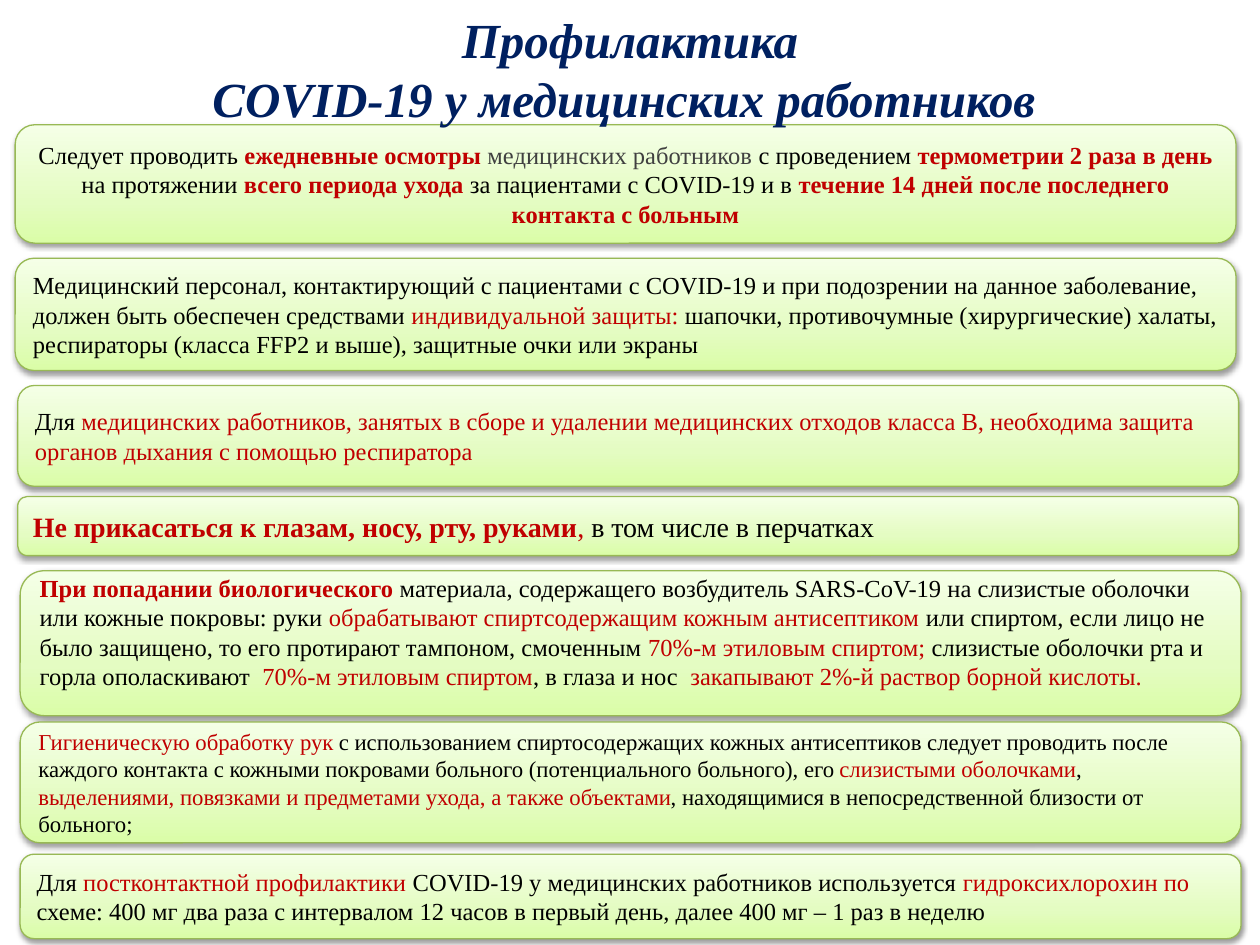
from pptx import Presentation
from pptx.dml.color import RGBColor
from pptx.enum.shapes import MSO_SHAPE as Shape
from pptx.enum.text import MSO_ANCHOR as Anchor, MSO_AUTO_SIZE as AutoSize, PP_ALIGN as Align
from pptx.oxml import parse_xml
from pptx.oxml.ns import nsdecls
from pptx.util import Inches, Pt

FONT = "Times New Roman"
COLORS = {
    "title": "002060", "plain": "000000", "red": "C00000", "grey": "404040",
    "edge": "98B955", "low": "DAFDA7", "middle": "E4FCC2", "high": "F5FFE7",
}
STOPS = [(0, "low"), (35, "middle"), (100, "high")]
TITLE = "Профилактика\vCOVID-19 у медицинских работников "
BOX_WIDTH = 9.69
LEFTS = [0.12, 0.12, 0.14, 0.14, 0.16, 0.16, 0.16]
TOPS = [0.99, 2.05, 3.06, 3.94, 4.53, 5.73, 6.78]
HEIGHTS = [0.94, 0.89, 0.8, 0.47, 1.15, 0.96, 0.67]
SIZES = [14, 14, 14, 16, 14, 13, 14]
ALIGNS = [Align.CENTER] + [Align.LEFT] * 6
BOTTOM_INSETS = [0.05] * 4 + [0.23] + [0.05] * 2

RULES = [
    [("Следует проводить ", "plain"),
     ("ежедневные осмотры ", "red bold"),
     ("медицинских работников ", "grey"),
     ("с проведением ", "plain"),
     ("термометрии 2 раза в день ", "red bold"),
     ("на протяжении ", "plain"),
     ("всего периода ухода ", "red bold"),
     ("за пациентами с COVID-19 и в ", "plain"),
     ("течение 14 дней после последнего контакта с больным", "red bold")],
    [("Медицинский персонал, контактирующий с пациентами с COVID-19 и при подозрении "
      "на данное заболевание, должен быть обеспечен средствами ", "plain"),
     ("индивидуальной защиты: ", "red"),
     ("шапочки, противочумные (хирургические) халаты, респираторы (класса FFP2 и выше), "
      "защитные очки или экраны", "plain")],
    [("Для ", "plain"),
     ("медицинских работников, занятых в сборе и удалении медицинских отходов класса В, "
      "необходима защита органов дыхания с помощью респиратора", "red")],
    [("Не прикасаться к глазам, носу, рту, руками", "red bold"),
     (", ", "red"),
     ("в том числе в перчатках", "plain")],
    [("При попадании биологического ", "red bold"),
     ("материала, содержащего возбудитель SARS-CoV-19 на слизистые оболочки "
      "или кожные покровы: руки ", "plain"),
     ("обрабатывают спиртсодержащим кожным антисептиком ", "red"),
     ("или спиртом, если лицо не было защищено, то его протирают тампоном, смоченным ", "plain"),
     ("70%-м этиловым спиртом; ", "red"),
     ("слизистые оболочки рта и горла ополаскивают  ", "plain"),
     ("70%-м этиловым спиртом", "red"),
     (", в глаза и нос  ", "plain"),
     ("закапывают 2%-й раствор борной кислоты.", "red")],
    [("Гигиеническую обработку рук ", "red"),
     ("с использованием спиртосодержащих кожных антисептиков следует проводить после каждого "
      "контакта с кожными покровами больного (потенциального больного), его ", "plain"),
     ("слизистыми оболочками", "red"),
     (", ", "plain"),
     ("выделениями, повязками и предметами ухода, а также объектами", "red"),
     (", находящимися в непосредственной близости от больного;", "plain")],
    [("Для ", "plain"),
     ("постконтактной профилактики ", "red"),
     ("COVID-19 у медицинских работников используется ", "plain"),
     ("гидроксихлорохин по ", "red"),
     ("схеме: 400 мг два раза с интервалом 12 часов в первый день, "
      "далее 400 мг – 1 раз в неделю", "plain")],
]


def color(name):
    return RGBColor.from_string(COLORS[name])


def add_span(para, text, size, tone, bold=False, italic=False):
    span = para.add_run()
    span.text = text
    font = span.font
    font.name, font.size, font.bold, font.italic = FONT, Pt(size), bold, italic
    font.color.rgb = color(tone)


def add_gradient_and_shadow(box):
    stops = "".join(
        f'<a:gs pos="{position * 1000}"><a:srgbClr val="{COLORS[name]}"/></a:gs>'
        for position, name in STOPS)
    gradient = parse_xml(
        f'<a:gradFill {nsdecls("a")} rotWithShape="1"><a:gsLst>{stops}</a:gsLst>'
        '<a:lin ang="16200000" scaled="0"/></a:gradFill>')
    shadow = parse_xml(
        f'<a:effectLst {nsdecls("a")}><a:outerShdw blurRad="{Pt(3.1)}" dist="{Pt(1.6)}" '
        'dir="5400000" rotWithShape="0"><a:srgbClr val="000000"><a:alpha val="38000"/>'
        '</a:srgbClr></a:outerShdw></a:effectLst>')
    line = box.line._get_or_add_ln()
    line.addprevious(gradient)
    line.addnext(shadow)


def add_rule(page, spans, left, top, height, size, align, bottom_inset):
    box = page.shapes.add_shape(Shape.ROUNDED_RECTANGLE, *map(Inches, (left, top, BOX_WIDTH, height)))
    box.line.color.rgb = color("edge")
    box.line.width = Pt(0.75)
    add_gradient_and_shadow(box)
    frame = box.text_frame
    frame.word_wrap = True
    frame.vertical_anchor = Anchor.MIDDLE
    frame.margin_bottom = Inches(bottom_inset)
    para = frame.paragraphs[0]
    para.alignment = align
    for text, style in spans:
        tone, *weight = style.split()
        add_span(para, text, size, tone, bold=bool(weight))


def add_title(page):
    title = page.shapes.title
    title.left, title.top, title.width, title.height = map(Inches, (0.5, 0.13, 9, 0.82))
    frame = title.text_frame
    frame.auto_size = AutoSize.NONE
    frame.vertical_anchor = Anchor.MIDDLE
    para = frame.paragraphs[0]
    para.alignment = Align.CENTER
    first, second = TITLE.split("\v")
    add_span(para, first, 28, "title", bold=True, italic=True)
    para.add_line_break()
    add_span(para, second, 28, "title", bold=True, italic=True)
    page.shapes._spTree.append(title._element)


def main():
    deck = Presentation()
    deck.slide_width, deck.slide_height = Inches(10), Inches(7.5)
    page = deck.slides.add_slide(deck.slide_layouts[5])
    for rule in zip(RULES, LEFTS, TOPS, HEIGHTS, SIZES, ALIGNS, BOTTOM_INSETS):
        add_rule(page, *rule)
    add_title(page)
    deck.save("out.pptx")


if __name__ == "__main__":
    main()
